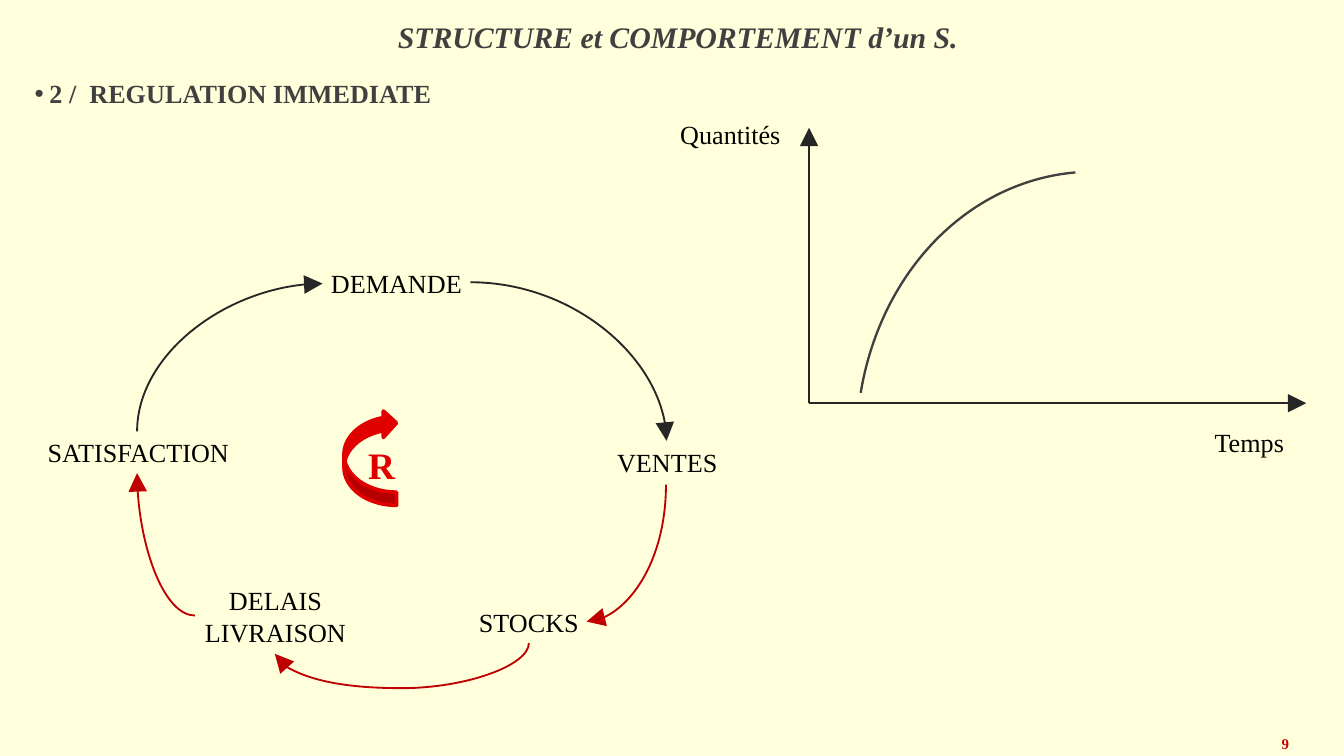
"""Build the slide on immediate regulation: a causal loop beside its growth curve."""
from lxml import etree
from pptx import Presentation
from pptx.dml.color import RGBColor
from pptx.enum import shapes, text
from pptx.oxml.ns import qn
from pptx.util import Inches, Pt

COLORS = {"background": "FFFFDC", "heading": "404040", "label": "000000",
          "dark": "262626", "delay": "C00000", "loop": "E10000"}
FONT = "Times New Roman"
CENTER = text.PP_ALIGN.CENTER
MIDDLE = text.MSO_ANCHOR.MIDDLE
SLIDE_WIDTH = Inches(10)
SLIDE_HEIGHT = SLIDE_WIDTH * 9 // 16

TITLE = ("STRUCTURE et COMPORTEMENT d’un S.", (0.2, 0.14, 9.69, 0.27))
SUBTITLE = ("2 /  REGULATION IMMEDIATE", (0.16, 0.53, 9.69, 4.88))
PAGE_NUMBER = ("9", (9.33, 5.44, 0.47, 0.18))
LOOP_LETTER = ("R", (2.64, 3.24, 0.41, 0.44))
LABELS = [
    ("DEMANDE", (2.4, 1.95, 1.1, 0.32)),
    ("SATISFACTION", (0.28, 3.21, 1.5, 0.32)),
    ("VENTES", (4.53, 3.28, 0.87, 0.32)),
    ("DELAIS LIVRAISON", (1.46, 4.31, 1.18, 0.55)),
    ("STOCKS", (3.5, 4.47, 0.87, 0.32)),
    ("Temps", (8.94, 3.13, 0.71, 0.32)),
    ("Quantités", (5, 0.84, 0.87, 0.32)),
]
LOOP_LINKS = [
    {"box": (3.5, 2.1, 1.46, 1.18), "color": "dark"},
    {"box": (4.15, 3.82, 1.02, 0.59), "color": "delay", "turn": 90},
    {"box": (1.16, 1.97, 1.1, 1.38), "color": "dark", "turn": 270},
    {"box": (2.95, 3.88, 0.08, 1.89), "color": "delay", "turn": 90, "bend": 4.2},
    {"box": (1.02, 3.52, 0.43, 1.06), "color": "delay", "turn": 180},
]
ORIGIN = (6.02, 3)
AXIS_ENDS = [(6.02, 0.95), (9.72, 3)]
ARROWHEAD = {"type": "triangle", "w": "lg", "len": "lg"}
LOOP_ARROW_BOX = (2.56, 3.05, 0.39, 0.71)
CURVE = {"box": (6.09, 1.56, 4.19, 3.62), "rotation": 264.6, "angles": (173.7, 0.23)}


def rgb(name):
    return RGBColor.from_string(COLORS[name])


def inches(values):
    return [Inches(value) for value in values]


def apply(target, values):
    for name, value in values.items():
        setattr(target, name, value)


def add_element(parent, tag, **attributes):
    element = etree.SubElement(parent, qn(tag))
    for name, value in attributes.items():
        element.set(name, value)


def write(shape, words, size, color, align=None, bold=False, italic=False, **frame_format):
    frame = shape.text_frame
    apply(frame, {"word_wrap": True, "auto_size": text.MSO_AUTO_SIZE.NONE, **frame_format})
    paragraph = frame.paragraphs[0]
    paragraph.alignment = align
    run = paragraph.add_run()
    run.text = words
    apply(run.font, {"name": FONT, "size": Pt(size), "bold": bold, "italic": italic})
    run.font.color.rgb = rgb(color)
    return paragraph


def add_text(slide, item, *style, **options):
    words, box = item
    return write(slide.shapes.add_textbox(*inches(box)), words, *style, **options)


def add_bullet(paragraph):
    properties = paragraph._p.get_or_add_pPr()
    for name, value in {"marL": 0.11, "indent": -0.11}.items():
        properties.set(name, str(int(Inches(value))))
    add_element(properties, "a:buFont", typeface="Arial")
    add_element(properties, "a:buChar", char="•")


def add_arrow(slide, kind, start, end, color):
    arrow = slide.shapes.add_connector(kind, *inches(start + end))
    arrow.line.width = Pt(1)
    arrow.line.color.rgb = rgb(color)
    properties = arrow._element.spPr
    add_element(properties.find(qn("a:ln")), "a:tailEnd", **ARROWHEAD)
    add_element(properties, "a:effectLst")
    return arrow


def add_loop_link(slide, box, color, turn=0, bend=None):
    left, top, width, height = box
    link = add_arrow(slide, shapes.MSO_CONNECTOR.CURVE, (left, top),
                     (left + width, top + height), color)
    properties = link._element.spPr
    properties.find(qn("a:xfrm")).set("rot", str(turn * 60000))
    geometry = properties.find(qn("a:prstGeom"))
    if bend is None:
        geometry.set("prst", "curvedConnector2")
    else:
        add_element(geometry.find(qn("a:avLst")), "a:gd",
                    name="adj1", fmla=f"val {round(bend * 100000)}")


def add_loop_arrow(slide):
    arrow = slide.shapes.add_shape(shapes.MSO_SHAPE.CURVED_LEFT_ARROW, *inches(LOOP_ARROW_BOX))
    arrow.shadow.inherit = False
    arrow.fill.solid()
    arrow.fill.fore_color.rgb = rgb("loop")
    arrow.line.color.rgb = rgb("loop")
    arrow.line.width = Pt(2)
    frame = arrow._element.spPr.find(qn("a:xfrm"))
    for flip in ("flipH", "flipV"):
        frame.set(flip, "1")


def add_curve(slide):
    curve = slide.shapes.add_shape(shapes.MSO_SHAPE.ARC, *inches(CURVE["box"]))
    curve.shadow.inherit = False
    curve.rotation = CURVE["rotation"]
    for index, angle in enumerate(CURVE["angles"]):
        curve.adjustments[index] = angle
    curve.fill.background()
    curve.line.color.rgb = rgb("heading")
    curve.line.width = Pt(1.25)


def main():
    presentation = Presentation()
    apply(presentation, {"slide_width": SLIDE_WIDTH, "slide_height": SLIDE_HEIGHT})
    slide = presentation.slides.add_slide(presentation.slide_layouts[5])
    slide.background.fill.solid()
    slide.background.fill.fore_color.rgb = rgb("background")

    title = slide.shapes.title
    words, box = TITLE
    apply(title, dict(zip(("left", "top", "width", "height"), inches(box))))
    write(title, words, 16, "heading", CENTER, bold=True, italic=True, vertical_anchor=MIDDLE)
    add_bullet(add_text(slide, SUBTITLE, 14, "heading", bold=True))
    add_text(slide, PAGE_NUMBER, 8, "delay", CENTER, bold=True, vertical_anchor=MIDDLE)

    sides = ("left", "top", "right", "bottom")
    margins = {f"margin_{side}": Inches(0.04) for side in sides}
    for label in LABELS:
        add_text(slide, label, 14, "label", CENTER, **margins)
    for link in LOOP_LINKS:
        add_loop_link(slide, **link)
    add_text(slide, LOOP_LETTER, 20, "loop", bold=True, word_wrap=False)
    add_loop_arrow(slide)
    for end in AXIS_ENDS:
        add_arrow(slide, shapes.MSO_CONNECTOR.STRAIGHT, ORIGIN, end, "dark")
    add_curve(slide)
    presentation.save("out.pptx")


if __name__ == "__main__":
    main()
